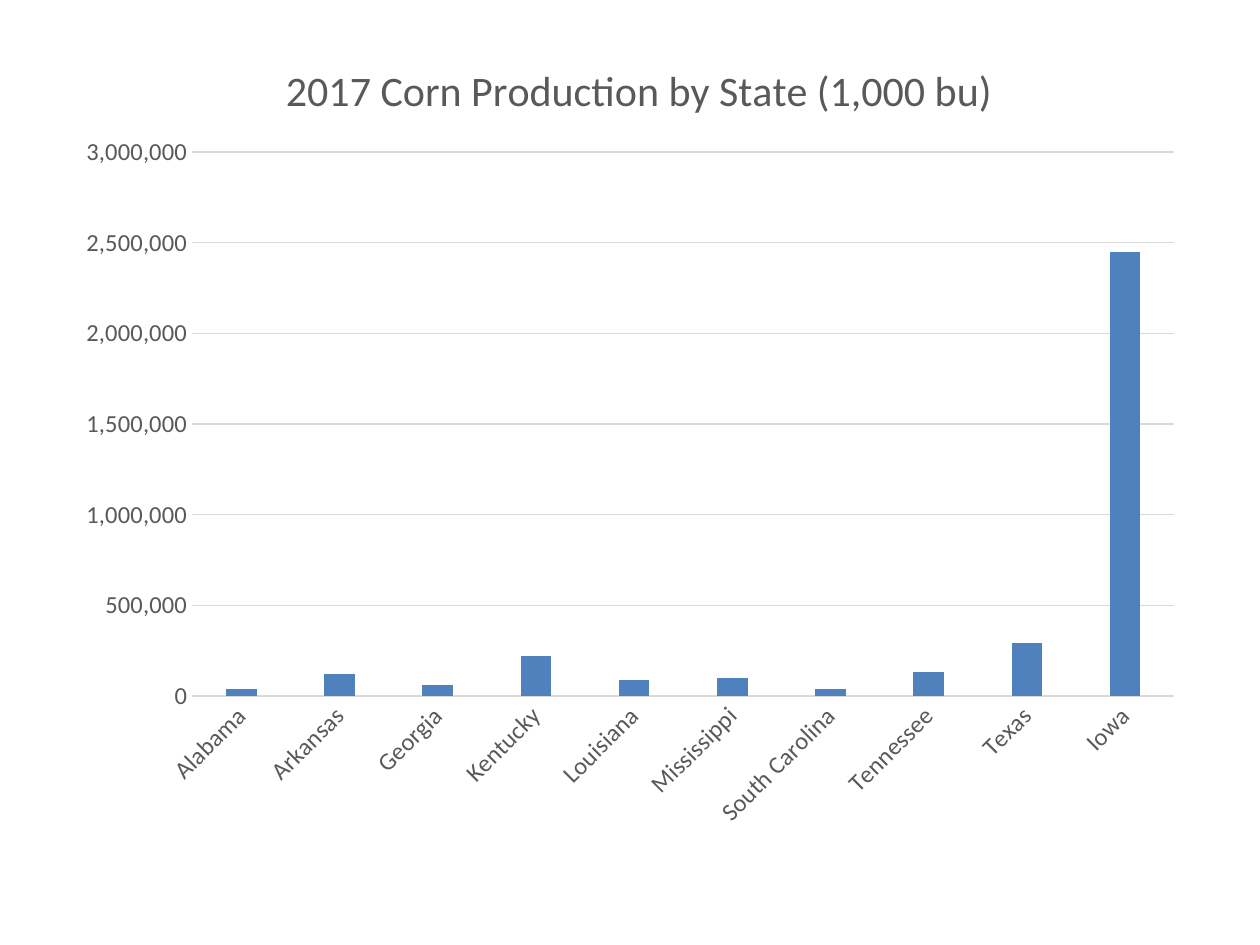
from dataclasses import dataclass

from lxml import etree
from pptx import Presentation
from pptx.chart.axis import _BaseAxis
from pptx.chart.chart import Chart
from pptx.chart.data import CategoryChartData
from pptx.dml.color import RGBColor
from pptx.enum.chart import XL_CHART_TYPE, XL_TICK_MARK
from pptx.oxml import parse_xml
from pptx.oxml.ns import nsdecls
from pptx.text.text import Font
from pptx.util import Inches, Pt

COLUMNS = XL_CHART_TYPE.COLUMN_CLUSTERED
NO_TICKS = XL_TICK_MARK.NONE
BLANK_LAYOUT = 6


@dataclass(frozen=True)
class Theme:
    font: str = "Calibri"
    text: RGBColor = RGBColor(0x59, 0x59, 0x59)
    rule: RGBColor = RGBColor(0xD9, 0xD9, 0xD9)
    column: RGBColor = RGBColor(0x4F, 0x81, 0xBD)
    title_size: int = 24
    label_size: int = 14
    rule_width: float = 0.75


@dataclass(frozen=True)
class StateHarvest:
    state: str
    bushels: int  # thousands


THEME = Theme()
TITLE = "2017 Corn Production by State (1,000 bu)"
HARVESTS = [
    StateHarvest("Alabama", 40000),
    StateHarvest("Arkansas", 120000),
    StateHarvest("Georgia", 60000),
    StateHarvest("Kentucky", 220000),
    StateHarvest("Louisiana", 90000),
    StateHarvest("Mississippi", 100000),
    StateHarvest("South Carolina", 40000),
    StateHarvest("Tennessee", 130000),
    StateHarvest("Texas", 290000),
    StateHarvest("Iowa", 2450000),
]


def style_font(font: Font, size: int) -> None:
    font.name = THEME.font
    font.size = Pt(size)
    font.bold = False
    font.color.rgb = THEME.text


def layout_xml(target: str, **fractions: float) -> etree._Element:
    """Manual layout in fractions of the chart area."""
    settings = f'<c:layoutTarget val="{target}"/>' if target else ""
    settings += '<c:xMode val="edge"/><c:yMode val="edge"/>'
    settings += "".join(f'<c:{name} val="{value}"/>' for name, value in fractions.items())
    return parse_xml(
        f'<c:layout {nsdecls("c")}><c:manualLayout>{settings}</c:manualLayout></c:layout>'
    )


def set_title(chart: Chart) -> None:
    chart.has_title = True
    title = chart.chart_title
    para = title.text_frame.paragraphs[0]
    para.text = TITLE
    style_font(para.runs[0].font, THEME.title_size)
    title.include_in_layout = False
    for layout in title._element.findall("{*}layout"):
        title._element.remove(layout)
    title._element.find("{*}tx").addnext(layout_xml("", x=0.19, y=0.04))


def style_axis(axis: _BaseAxis) -> None:
    axis.major_tick_mark = NO_TICKS
    axis.minor_tick_mark = NO_TICKS
    style_font(axis.tick_labels.font, THEME.label_size)


def add_harvest_chart(slide) -> None:
    data = CategoryChartData(number_format="#,##0")
    data.categories = [harvest.state for harvest in HARVESTS]
    data.add_series("Series 1", [harvest.bushels for harvest in HARVESTS])
    frame = slide.shapes.add_chart(
        COLUMNS, Inches(0.5), Inches(0.17), Inches(9), Inches(6.53), data
    )
    chart = frame.chart
    chart.has_legend = False
    chart.font.name = THEME.font
    chart.font.size = Pt(10)
    set_title(chart)

    # Columns
    plot = chart.plots[0]
    plot.vary_by_categories = False
    plot.gap_width = 219
    plot.overlap = -27
    fill = plot.series[0].format.fill
    fill.solid()
    fill.fore_color.rgb = THEME.column

    # Axes and gridlines
    states, bushels = chart.category_axis, chart.value_axis
    for axis in (states, bushels):
        style_axis(axis)
    states._element.find("{*}txPr/{*}bodyPr").set("rot", "-2700000")
    bushels.minimum_scale, bushels.maximum_scale = 0, 3000000
    bushels.major_unit = 500000
    bushels.tick_labels.number_format = "#,##0"
    bushels.tick_labels.number_format_is_linked = False
    bushels.format.line.fill.background()
    bushels.has_major_gridlines = True
    for line in (states.format.line, bushels.major_gridlines.format.line):
        line.color.rgb = THEME.rule
        line.width = Pt(THEME.rule_width)

    # Plot area
    plot_area = chart._chartSpace.find("{*}chart/{*}plotArea")
    for layout in plot_area.findall("{*}layout"):
        plot_area.remove(layout)
    plot_area.insert(0, layout_xml("inner", x=0.114, y=0.159, w=0.866, h=0.661))


def main() -> None:
    deck = Presentation()
    deck.slide_width, deck.slide_height = Inches(10), Inches(7.5)
    slide = deck.slides.add_slide(deck.slide_layouts[BLANK_LAYOUT])
    add_harvest_chart(slide)
    deck.save("out.pptx")


if __name__ == "__main__":
    main()
